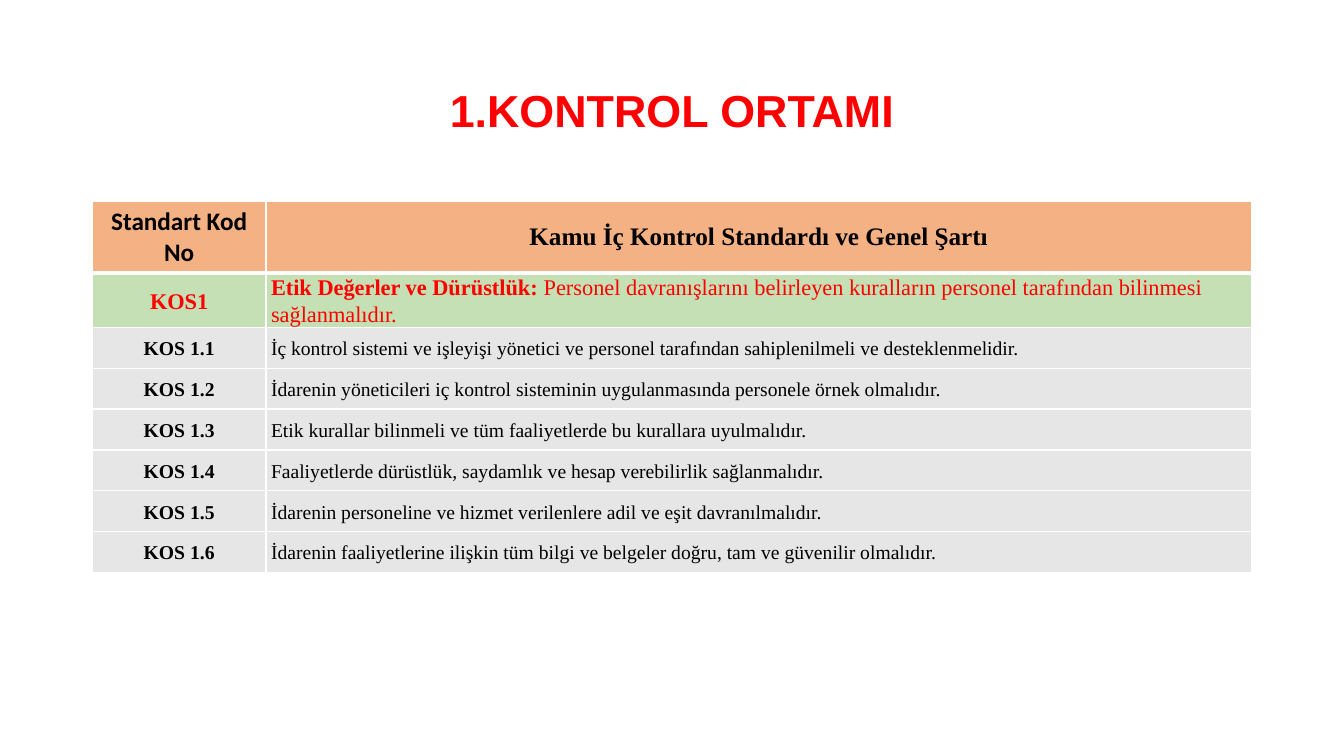
from dataclasses import dataclass

from lxml import etree
from pptx import Presentation
from pptx.dml.color import RGBColor
from pptx.enum.text import MSO_ANCHOR, PP_ALIGN
from pptx.oxml.ns import qn
from pptx.table import _Cell
from pptx.text.text import _Paragraph
from pptx.util import Pt

LEFT, CENTER, JUSTIFY = PP_ALIGN.LEFT, PP_ALIGN.CENTER, PP_ALIGN.JUSTIFY
TOP, MIDDLE = MSO_ANCHOR.TOP, MSO_ANCHOR.MIDDLE
TITLE_ONLY = 5

RED, BLACK, WHITE = "FF0000", "000000", "FFFFFF"
ORANGE, GREEN, GRAY = "F4B183", "C5E0B4", "E7E6E6"
SERIF = "Times New Roman"
CONTENT_LEFT, CONTENT_WIDTH = 66, 828
COLUMN_WIDTHS = (124, 704)
TABLE_TOP, TABLE_HEIGHT, ROW_HEIGHT = 144, 266.4, 29.2


@dataclass
class StandardRow:
    code: str
    heading: str
    text: str
    size: float = 14
    color: str = BLACK
    fill: str = GRAY
    align: PP_ALIGN = JUSTIFY


ROWS = [
    StandardRow("KOS1", "Etik Değerler ve Dürüstlük: ",
                "Personel davranışlarını belirleyen kuralların personel tarafından "
                "bilinmesi sağlanmalıdır.", 16, RED, GREEN, LEFT),
] + [
    StandardRow(f"KOS 1.{number}", "", text)
    for number, text in enumerate((
        "İç kontrol sistemi ve işleyişi yönetici ve personel tarafından "
        "sahiplenilmeli ve desteklenmelidir.",
        "İdarenin yöneticileri iç kontrol sisteminin uygulanmasında personele örnek olmalıdır.",
        "Etik kurallar bilinmeli ve tüm faaliyetlerde bu kurallara uyulmalıdır.",
        "Faaliyetlerde dürüstlük, saydamlık ve hesap verebilirlik sağlanmalıdır.",
        "İdarenin personeline ve hizmet verilenlere adil ve eşit davranılmalıdır.",
        "İdarenin faaliyetlerine ilişkin tüm bilgi ve belgeler doğru, tam ve güvenilir olmalıdır.",
    ), start=1)
]


def rgb(value: str) -> RGBColor:
    return RGBColor.from_string(value)


def add_text(paragraph: _Paragraph, text: str, *, size: float, font: str = SERIF,
             color: str = BLACK, bold: bool = True, align: PP_ALIGN = CENTER) -> None:
    paragraph.alignment = align
    run = paragraph.add_run()
    run.text = text
    run.font.name = font
    run.font.size = Pt(size)
    run.font.bold = bold
    run.font.color.rgb = rgb(color)


def format_cell(cell: _Cell, fill: str, *, anchor: MSO_ANCHOR = MIDDLE,
                bottom_width: float = 1, top_width: float = 1) -> _Paragraph:
    """Fill and border a cell, and return its paragraph."""
    cell.vertical_anchor = anchor
    cell.fill.solid()
    cell.fill.fore_color.rgb = rgb(fill)
    properties = cell._tc.get_or_add_tcPr()
    widths = {"a:lnL": 1, "a:lnR": 1, "a:lnT": top_width, "a:lnB": bottom_width}
    for index, (tag, width) in enumerate(widths.items()):
        line = etree.Element(qn(tag), w=str(Pt(width)))
        solid = etree.SubElement(line, qn("a:solidFill"))
        etree.SubElement(solid, qn("a:srgbClr"), val=WHITE)
        properties.insert(index, line)
    return cell.text_frame.paragraphs[0]


def format_body_cell(cell: _Cell, fill: str, top_width: float) -> _Paragraph:
    cell.margin_left = cell.margin_right = Pt(3.6)
    cell.margin_top, cell.margin_bottom = Pt(0.6), Pt(0)
    paragraph = format_cell(cell, fill, top_width=top_width)
    paragraph.line_spacing = 1.07
    paragraph.space_after = Pt(8)
    return paragraph


def main() -> None:
    presentation = Presentation()
    presentation.slide_width, presentation.slide_height = Pt(960), Pt(540)
    slide = presentation.slides.add_slide(presentation.slide_layouts[TITLE_ONLY])

    # Title
    title = slide.shapes.title
    title.left, title.top = Pt(CONTENT_LEFT), Pt(28.8)
    title.width, title.height = Pt(CONTENT_WIDTH), Pt(104.4)
    title.text_frame.vertical_anchor = MIDDLE
    title_paragraph = title.text_frame.paragraphs[0]
    title_paragraph.line_spacing = 0.9
    add_text(title_paragraph, "1.KONTROL ORTAMI", size=32, font="Arial", color=RED)

    # Table grid
    frame = slide.shapes.add_table(len(ROWS) + 1, len(COLUMN_WIDTHS), Pt(CONTENT_LEFT),
                                   Pt(TABLE_TOP), Pt(CONTENT_WIDTH), Pt(TABLE_HEIGHT))
    table = frame.table
    table.horz_banding = False
    for column, width in zip(table.columns, COLUMN_WIDTHS):
        column.width = Pt(width)
    for row in table.rows:
        row.height = Pt(ROW_HEIGHT)
    frame.height = Pt(TABLE_HEIGHT)

    # Header row
    headers = (("Standart Kod No", "Calibri", TOP),
               ("Kamu İç Kontrol Standardı ve Genel Şartı", SERIF, MIDDLE))
    for column_index, (text, font, anchor) in enumerate(headers):
        paragraph = format_cell(table.cell(0, column_index), ORANGE,
                                anchor=anchor, bottom_width=3)
        add_text(paragraph, text, size=18, font=font)

    # Standards
    for row_index, standard in enumerate(ROWS, start=1):
        top_width = 3 if row_index == 1 else 1
        code, description = (
            format_body_cell(table.cell(row_index, column_index), standard.fill, top_width)
            for column_index in range(2))
        style = {"size": standard.size, "color": standard.color}
        add_text(code, standard.code, **style)
        if standard.heading:
            add_text(description, standard.heading, align=standard.align, **style)
        add_text(description, standard.text, bold=False, align=standard.align, **style)

    presentation.save("out.pptx")


if __name__ == "__main__":
    main()
